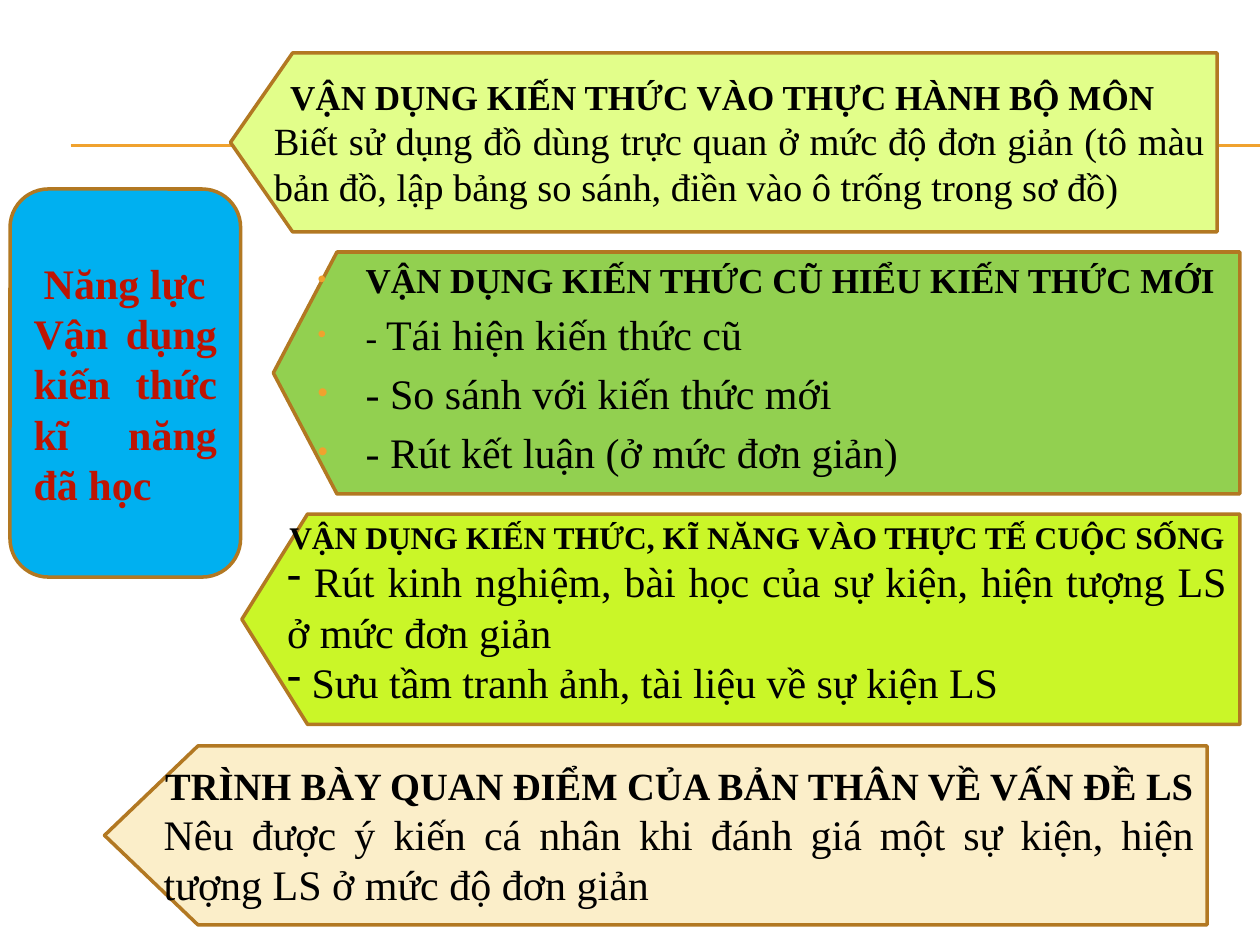
"""Builds a slide that breaks one learning competency into four arrow panels."""
from lxml.etree import SubElement
from pptx import Presentation
from pptx.dml.color import RGBColor
from pptx.enum.shapes import MSO_CONNECTOR as Connector, MSO_SHAPE as Preset
from pptx.enum.text import MSO_ANCHOR as Anchor, MSO_AUTO_SIZE as AutoSize, PP_ALIGN as Align
from pptx.oxml import parse_xml
from pptx.oxml.ns import nsdecls, qn
from pptx.util import Inches, Pt

COLORS = {
    "rule": "F0A22E", "outline": "B27822", "black": "000000", "red": "BE1402",
    "blue": "00B0F0", "lemon": "E2FE8A", "green": "92D050", "lime": "CAF628",
    "cream": "FBEEC9",
}


class SlideBuilder:
    """Holds the style and the current slide."""

    font_name = "Times New Roman"

    def __init__(self, slide):
        self.slide = slide

    def color(self, name):
        return RGBColor.from_string(COLORS[name])

    def rule(self, left, right, y):
        line = self.slide.shapes.add_connector(
            Connector.STRAIGHT, Inches(left), Inches(y), Inches(right), Inches(y))
        line.line.color.rgb = self.color("rule")
        line.line.width = Pt(0.75)
        SubElement(line._element.spPr, qn("a:effectLst"))

    def style(self, shape, fill, anchor=Anchor.MIDDLE):
        shape.shadow.inherit = False
        shape.fill.solid()
        shape.fill.fore_color.rgb = self.color(fill)
        shape.line.color.rgb = self.color("outline")
        shape.line.width = Pt(2)
        frame = shape.text_frame
        frame.word_wrap = True
        frame.auto_size = AutoSize.NONE
        frame.vertical_anchor = anchor
        return frame

    def card(self, left, top, width, height, fill):
        shape = self.slide.shapes.add_shape(
            Preset.ROUNDED_RECTANGLE, *map(Inches, (left, top, width, height)))
        return self.style(shape, fill)

    def arrow(self, left, top, width, height, point, fill):
        shape = self.slide.shapes.add_shape(
            Preset.PENTAGON, *map(Inches, (left, top, width, height)))
        shape.adjustments[0] = point
        shape._element.spPr.xfrm.set("flipH", "1")
        return self.style(shape, fill)

    def body_arrow(self, left, top, width, height, point, fill):
        body = self.slide.placeholders[1]
        body.left, body.top, body.width, body.height = map(Inches, (left, top, width, height))
        properties = body._element.spPr
        properties.xfrm.set("flipH", "1")
        properties.insert(1, parse_xml(
            f'<a:prstGeom {nsdecls("a")} prst="homePlate"><a:avLst>'
            f'<a:gd name="adj" fmla="val {round(point * 100000)}"/></a:avLst></a:prstGeom>'))
        return self.style(body, fill, Anchor.TOP)

    def paragraph(self, frame, text, size, bold=False, align=Align.JUSTIFY, color="black",
                  bullet=None, margin=0, indent=0, marker_color=None, lead=None):
        para = frame.paragraphs[0]
        if para.runs:
            para = frame.add_paragraph()
        para.alignment = align
        properties = para._p.get_or_add_pPr()
        properties.set("marL", str(Inches(margin)))
        properties.set("indent", str(Inches(indent)))
        if marker_color:
            marker = SubElement(properties, qn("a:buClr"))
            SubElement(marker, qn("a:srgbClr"), val=COLORS[marker_color])
            SubElement(properties, qn("a:buSzPct"), val="70000")
        if bullet:
            SubElement(properties, qn("a:buChar"), char=bullet)
        para.font.name = self.font_name
        para.font.size = Pt(size)
        para.font.bold = bold
        para.font.color.rgb = self.color(color)
        if lead:
            span = para.add_run()
            span.text, span.font.size = lead, Pt(20)
        para.add_run().text = text


def main():
    deck = Presentation()
    deck.slide_width, deck.slide_height = Inches(10), Inches(7.5)
    slide = deck.slides.add_slide(deck.slide_layouts[1])
    title = slide.shapes.title._element
    title.getparent().remove(title)
    builder = SlideBuilder(slide)

    for y in (1.15, 1.16):
        builder.rule(0.56, 10, y)

    competency = builder.card(0.08, 1.5, 1.83, 3.08, "blue")
    builder.paragraph(competency, "Năng lực", 24, bold=True, color="red", indent=0.08)
    builder.paragraph(competency, "Vận dụng kiến thức kĩ năng đã học", 24, bold=True, color="red")

    practice = builder.arrow(1.83, 0.42, 7.83, 1.42, 0.347, "lemon")
    builder.paragraph(practice, "VẬN DỤNG KIẾN THỨC VÀO THỰC HÀNH BỘ MÔN", 20,
                      bold=True, indent=0.13)
    builder.paragraph(practice, "Biết sử dụng đồ dùng trực quan ở mức độ đơn giản (tô màu "
                      "bản đồ, lập bảng so sánh, điền vào ô trống trong sơ đồ)", 22)

    knowledge = builder.body_arrow(2.17, 2, 7.67, 1.92, 0.263, "green")
    listing = dict(align=Align.LEFT, bullet="•", margin=0.38, indent=-0.38, marker_color="rule")
    builder.paragraph(knowledge, "VẬN DỤNG KIẾN THỨC CŨ HIỂU KIẾN THỨC MỚI", 20,
                      bold=True, **listing)
    builder.paragraph(knowledge, "Tái hiện kiến thức cũ", 24, lead="- ", **listing)
    for text in ("- So sánh với kiến thức mới", "- Rút kết luận (ở mức đơn giản)"):
        builder.paragraph(knowledge, text, 24, **listing)

    life = builder.arrow(1.92, 4.08, 7.92, 1.67, 0.312, "lime")
    life.margin_bottom = Inches(0.16)
    builder.paragraph(life, "VẬN DỤNG KIẾN THỨC, KĨ NĂNG VÀO THỰC TẾ CUỘC SỐNG", 18,
                      bold=True, align=Align.CENTER)
    for text in (" Rút kinh nghiệm, bài học của sự kiện, hiện tượng LS ở mức đơn giản",
                 " Sưu tầm tranh ảnh, tài liệu về sự kiện LS"):
        builder.paragraph(life, text, 24, bullet="-")

    opinion = builder.arrow(0.83, 5.92, 8.75, 1.42, 0.522, "cream")
    builder.paragraph(opinion, "TRÌNH BÀY QUAN ĐIỂM CỦA BẢN THÂN VỀ VẤN ĐỀ LS", 22,
                      bold=True, align=Align.CENTER)
    builder.paragraph(opinion, "Nêu được ý kiến cá nhân khi đánh giá một sự kiện, hiện "
                      "tượng LS ở mức độ đơn giản", 24)

    deck.save("out.pptx")


if __name__ == "__main__":
    main()
